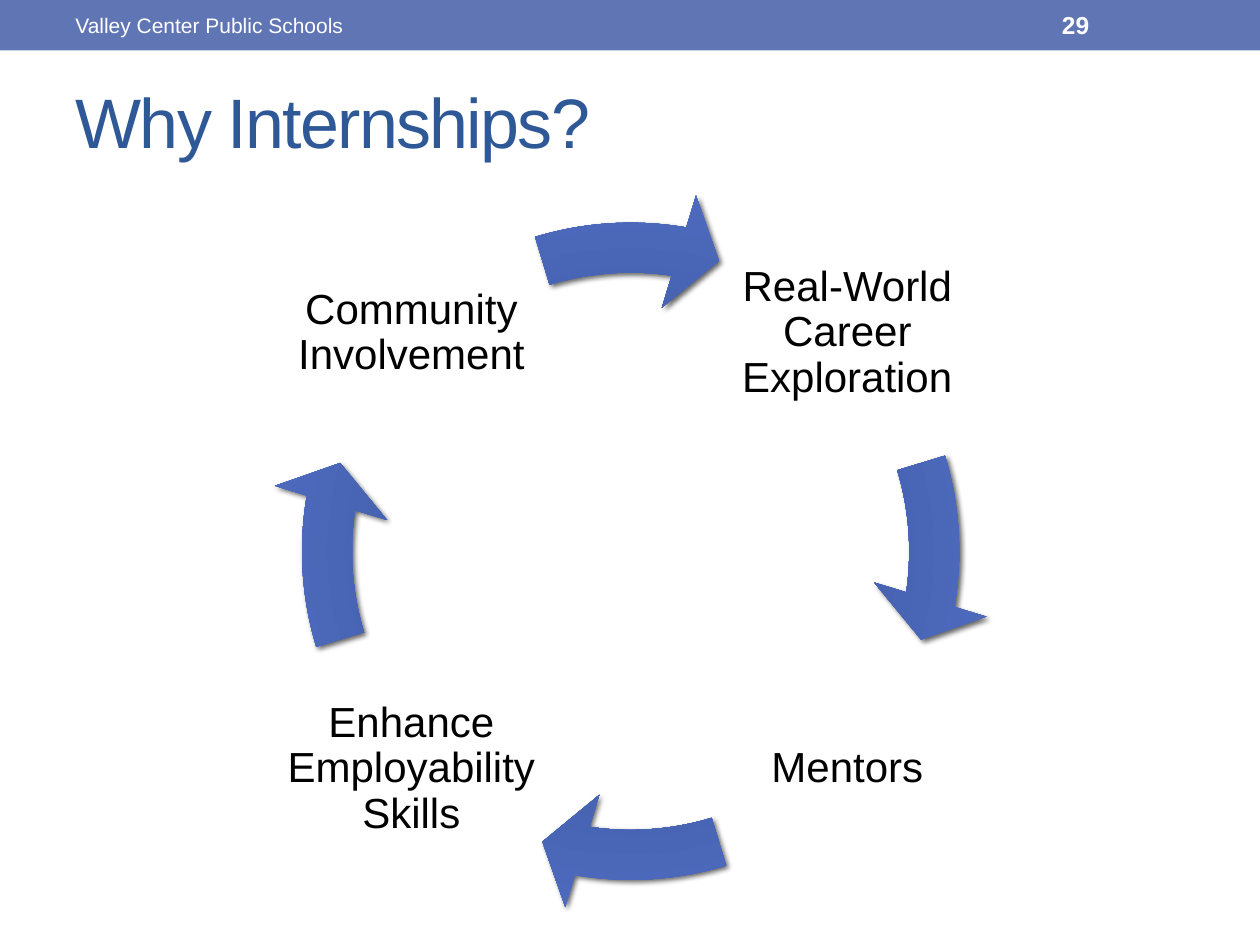
from lxml import etree
from pptx import Presentation
from pptx.dml.color import RGBColor
from pptx.enum.shapes import MSO_SHAPE
from pptx.enum.text import MSO_ANCHOR, PP_ALIGN
from pptx.oxml import parse_xml
from pptx.util import Inches, Pt

RECTANGLE, CIRCULAR_ARROW = MSO_SHAPE.RECTANGLE, MSO_SHAPE.CIRCULAR_ARROW
MIDDLE, LEFT, CENTER = MSO_ANCHOR.MIDDLE, PP_ALIGN.LEFT, PP_ALIGN.CENTER
DRAWING = "http://schemas.openxmlformats.org/drawingml/2006/main"

# Content
TITLE = "Why Internships?"
FOOTER = "Valley Center Public Schools"
PAGE_NUMBER = "29"
REASONS = [  # clockwise from top right: text, column, row
    ("Real-World Career Exploration", 1, 0),
    ("Mentors", 1, 1),
    ("Enhance Employability Skills", 0, 1),
    ("Community Involvement", 0, 0),
]
COLORS = {"bar": "6076B4", "title": "2F5897", "text": "000000",
          "bar_text": "FFFFFF", "shadow": "000000"}
ARROW_STOPS = [(0, "405CAC"), (34, "445EA9"), (70, "4C69BC"), (100, "6076B4")]

# Cycle geometry
FONT = "Arial"
COLUMNS, ROWS, LABEL_SIZE = (2.25, 5.71), (1.63, 5.09), 2.03
RING_LEFT, RING_TOP, RING_SIZE = 2.13, 1.5, 5.75
FULL_TURN, QUARTER_TURN = 216, 54  # angle adjustments
ARROW_END, ARROW_START = 5.495, 205.852


def write(frame, text, size, color, align=LEFT, bold=False):
    frame.word_wrap = True
    frame.vertical_anchor = MIDDLE
    frame.text = text
    para = frame.paragraphs[0]
    para.alignment = align
    font = para.runs[0].font
    font.name, font.size, font.bold = FONT, Pt(size), bold
    font.color.rgb = RGBColor.from_string(color)
    return para


def add_text(page, place, *args, **kwargs):
    box = page.shapes.add_textbox(*map(Inches, place))
    return box.text_frame, write(box.text_frame, *args, **kwargs)


def add_label(page, text, column, row):
    place = (COLUMNS[column], ROWS[row], LABEL_SIZE, LABEL_SIZE)
    frame, para = add_text(page, place, text, 24, COLORS["text"], CENTER)
    frame.margin_left = frame.margin_right = Inches(0.03)
    frame.margin_top = frame.margin_bottom = Inches(0.03)
    para.line_spacing = 0.9


def add_arrow(page, index):
    arrow = page.shapes.add_shape(
        CIRCULAR_ARROW, Inches(RING_LEFT), Inches(RING_TOP),
        Inches(RING_SIZE), Inches(RING_SIZE))
    turn = index * QUARTER_TURN
    values = (0.069, 4.653, ARROW_END + turn,
              (ARROW_START + turn) % FULL_TURN, 0.081)
    for number, value in enumerate(values):
        arrow.adjustments[number] = value
    arrow.line.fill.background()

    # Radial gradient and soft shadow
    stops = "".join(f'<a:gs pos="{pos * 1000}"><a:srgbClr val="{color}"/></a:gs>'
                    for pos, color in ARROW_STOPS)
    gradient = parse_xml(
        f'<a:gradFill xmlns:a="{DRAWING}" rotWithShape="1"><a:gsLst>{stops}</a:gsLst>'
        '<a:path path="circle"><a:fillToRect l="100000" t="100000" '
        'r="100000" b="100000"/></a:path></a:gradFill>')
    shadow = parse_xml(
        f'<a:effectLst xmlns:a="{DRAWING}"><a:outerShdw blurRad="{Pt(3)}" '
        f'dist="{Pt(2)}" dir="2700000" rotWithShape="0">'
        f'<a:srgbClr val="{COLORS["shadow"]}"><a:alpha val="60000"/></a:srgbClr>'
        '</a:outerShdw></a:effectLst>')
    properties = arrow._element.spPr
    properties.find(etree.QName(DRAWING, "prstGeom").text).addnext(gradient)
    properties.append(shadow)


def main():
    deck = Presentation()
    deck.slide_width, deck.slide_height = Inches(10), Inches(7.5)
    page = deck.slides.add_slide(deck.slide_layouts[5])

    # Top bar
    bar = page.shapes.add_shape(RECTANGLE, 0, 0, deck.slide_width, Inches(0.4))
    bar.shadow.inherit = False
    bar.fill.solid()
    bar.fill.fore_color.rgb = RGBColor.from_string(COLORS["bar"])
    bar.line.fill.background()

    # Title
    title = page.shapes.title
    title.left, title.top = Inches(0.5), Inches(0.42)
    title.width, title.height = Inches(9), Inches(1.08)
    para = write(title.text_frame, TITLE, 40, COLORS["title"])
    para.runs[0].font._element.set("spc", "-100")

    # Cycle of reasons
    for index, (text, column, row) in enumerate(REASONS):
        add_label(page, text, column, row)
        add_arrow(page, index)

    # Bar texts
    add_text(page, (0.5, 0.02, 3.17, 0.36), FOOTER, 12, COLORS["bar_text"])
    add_text(page, (8.33, 0.02, 1.17, 0.36), PAGE_NUMBER, 14,
             COLORS["bar_text"], bold=True)
    deck.save("out.pptx")


if __name__ == "__main__":
    main()
